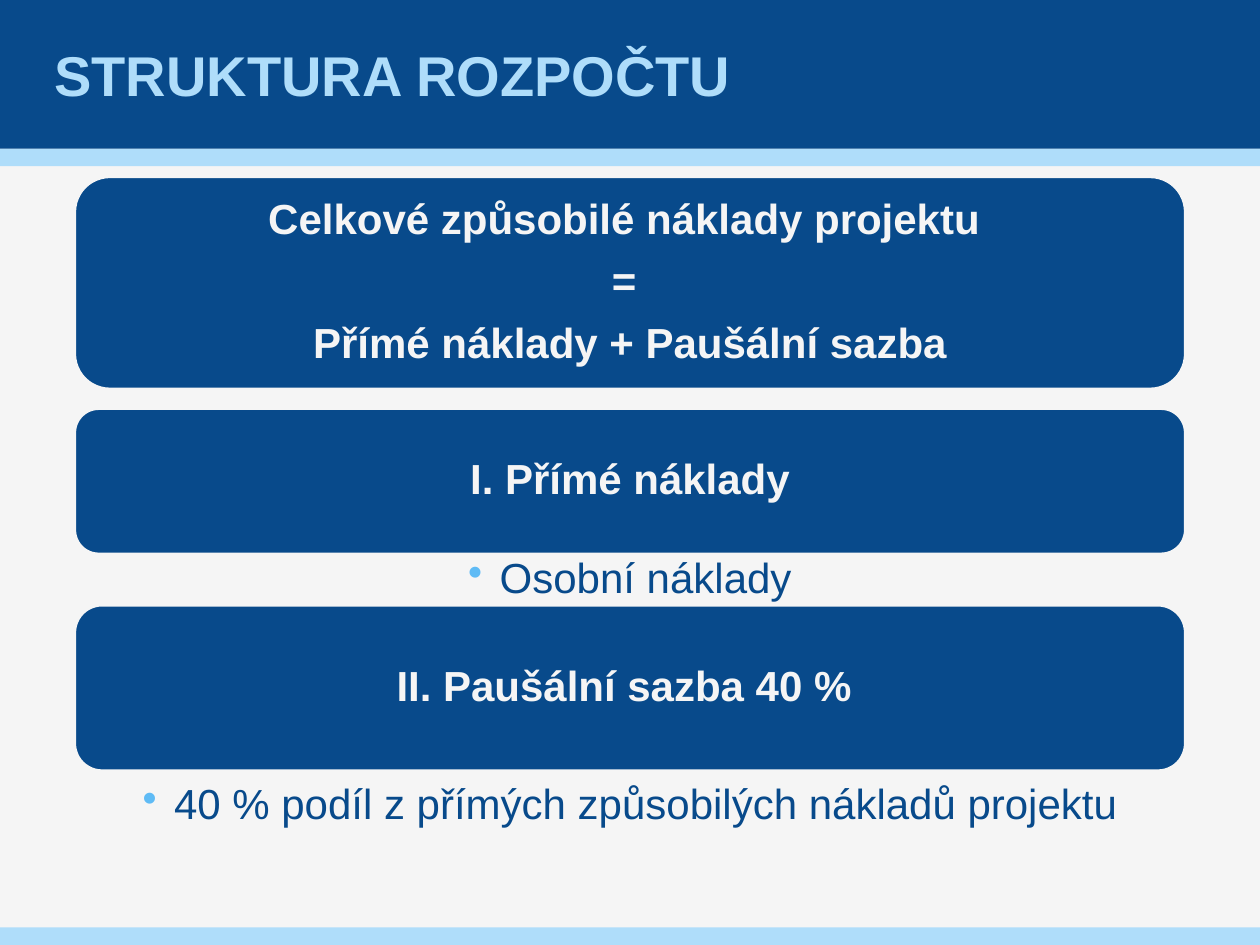
from lxml import etree
from pptx import Presentation
from pptx.dml.color import RGBColor
from pptx.enum.shapes import MSO_SHAPE
from pptx.enum.text import MSO_ANCHOR, PP_ALIGN
from pptx.oxml.ns import qn
from pptx.util import Inches, Pt

RECT, ROUNDED = MSO_SHAPE.RECTANGLE, MSO_SHAPE.ROUNDED_RECTANGLE
TOP, MIDDLE = MSO_ANCHOR.TOP, MSO_ANCHOR.MIDDLE
LEFT, CENTER = PP_ALIGN.LEFT, PP_ALIGN.CENTER


def rgb(value):
    return RGBColor.from_string(value)


class Deck:
    """Holds the slide style and draws each kind of element."""

    FONT = "Arial"
    NAVY, SKY, PALE, ACCENT = "084A8B", "AFDDFA", "F5F5F5", "5FBBF5"
    X, W = 0.59, 8.82

    def __init__(self):
        self.prs = Presentation()
        self.prs.slide_width, self.prs.slide_height = Inches(10), Inches(7.5)
        self.s = self.prs.slides.add_slide(self.prs.slide_layouts[6])
        self.s.background.fill.solid()
        self.s.background.fill.fore_color.rgb = rgb(self.PALE)

    def shape(self, kind, x, y, w, h, fill):
        sp = self.s.shapes.add_shape(kind, Inches(x), Inches(y), Inches(w), Inches(h))
        sp.shadow.inherit = False
        sp.fill.solid()
        sp.fill.fore_color.rgb = rgb(fill)
        sp.line.fill.background()
        return sp

    def band(self, y, h, fill):
        self.shape(RECT, 0, y, 10, h, fill)

    def textbox(self, x, y, w, h):
        return self.s.shapes.add_textbox(Inches(x), Inches(y), Inches(w), Inches(h))

    def set_text(self, sp, lines, color, size=24, bold=True, align=CENTER,
                 anchor=MIDDLE, insets=(0.1, 0.1, 0.1, 0.1), spacing=0.9, after=9.5):
        tf = sp.text_frame
        tf.word_wrap = True
        tf.vertical_anchor = anchor
        tf.margin_left, tf.margin_top, tf.margin_right, tf.margin_bottom = map(Inches, insets)
        tf.text = "\n".join(lines)
        for p in tf.paragraphs:
            p.alignment, p.line_spacing, p.space_after = align, spacing, Pt(after)
            p.font.name, p.font.size, p.font.bold = self.FONT, Pt(size), bold
            p.font.color.rgb = rgb(color)
        return tf

    def title(self, text):
        sp = self.textbox(0.39, 0, 9.21, 1.18)
        self.set_text(sp, [text], self.SKY, 32, align=LEFT,
                      insets=(0.04, 0, 0.04, 0), spacing=1.0, after=0)

    def panel(self, y, h, *lines):
        sp = self.shape(ROUNDED, self.X, y, self.W, h, self.NAVY)
        sp.line.color.rgb = rgb(self.PALE)
        sp.line.width = Pt(2)
        self.set_text(sp, lines, self.PALE)

    def bullet(self, y, h, text):
        sp = self.textbox(self.X, y, self.W, h)
        tf = self.set_text(sp, [text], self.NAVY, bold=False, anchor=TOP,
                           insets=(0.28, 0.03, 0.19, 0.03), after=5.5)
        pPr = tf.paragraphs[0]._p.get_or_add_pPr()
        pPr.set("marL", str(Inches(0.25)))
        pPr.set("indent", str(Inches(-0.25)))
        char = etree.Element(qn("a:buChar"), char="•")
        color = etree.Element(qn("a:buClr"))
        etree.SubElement(color, qn("a:srgbClr"), val=self.ACCENT)
        default = pPr.find(qn("a:defRPr"))
        for node in (color, char):
            default.addprevious(node)


def main():
    d = Deck()
    d.band(1.18, 0.14, d.SKY)
    d.band(0, 1.18, d.NAVY)
    d.band(7.36, 0.14, d.SKY)
    d.title("STRUKTURA ROZPOČTU")
    d.panel(1.4, 1.69, "Celkové způsobilé náklady projektu ", "= ",
            "Přímé náklady + Paušální sazba")
    d.panel(3.24, 1.16, "I. Přímé náklady")
    d.bullet(4.39, 0.62, "Osobní náklady ")
    d.panel(4.8, 1.32, "II. Paušální sazba 40 % ")
    d.bullet(6.19, 0.87, "40 % podíl z přímých způsobilých nákladů projektu ")
    d.prs.save("out.pptx")


if __name__ == "__main__":
    main()
